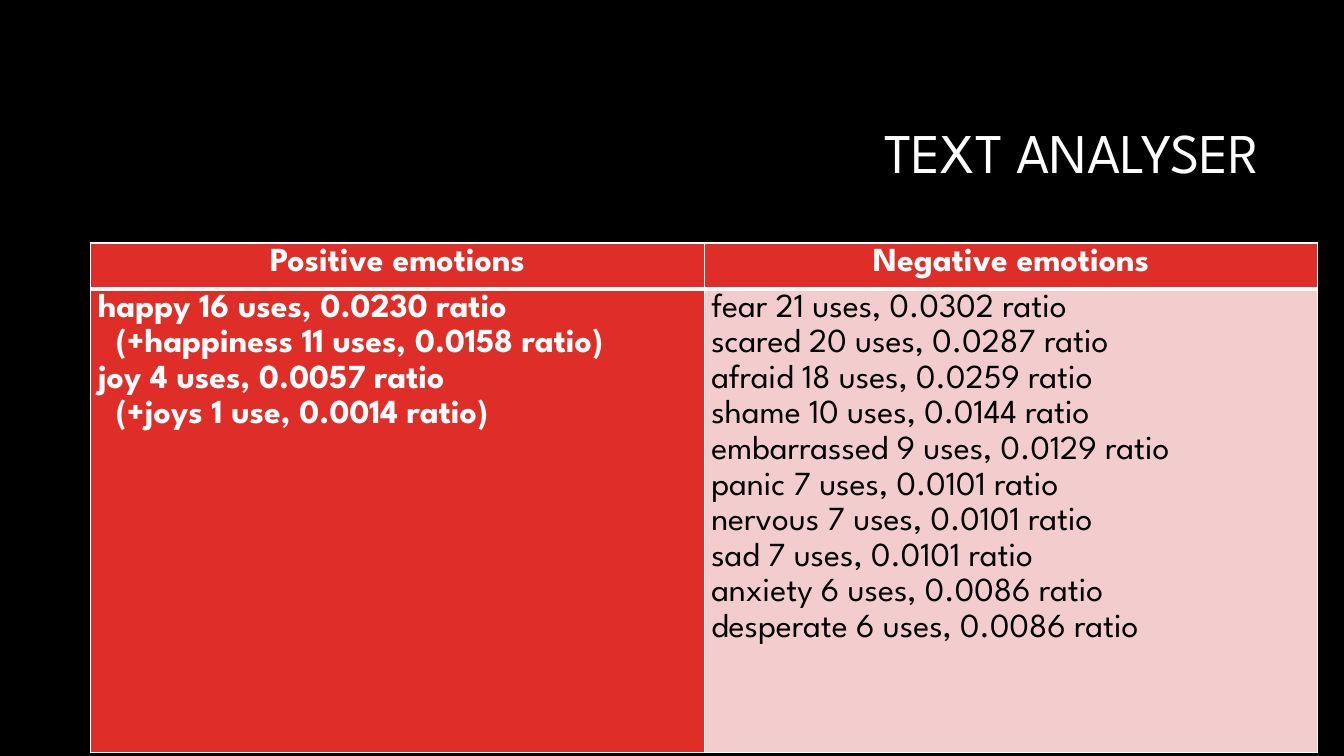
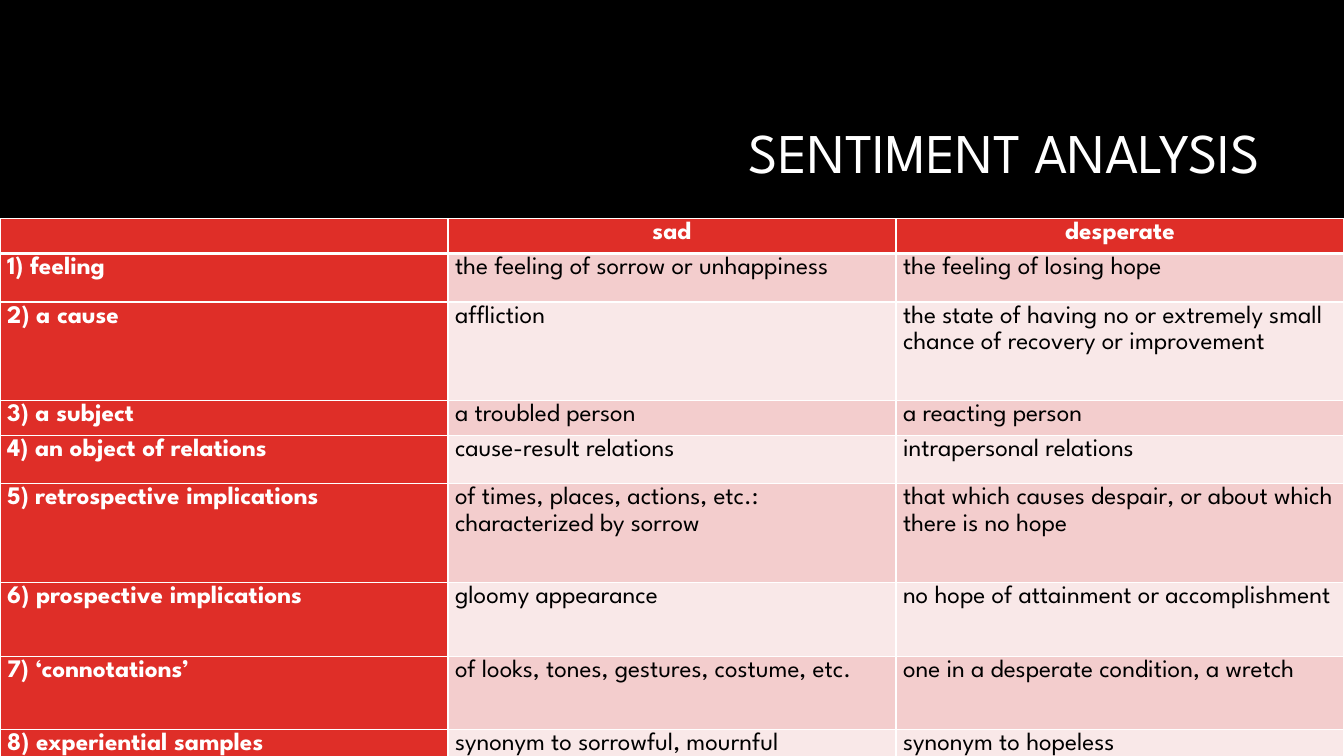
from lxml import etree
from pptx import Presentation
from pptx.dml.color import RGBColor
from pptx.enum.text import MSO_ANCHOR, PP_ALIGN
from pptx.oxml.ns import qn
from pptx.util import Inches, Pt

BLACK = RGBColor(0x00, 0x00, 0x00)
WHITE = RGBColor(0xFF, 0xFF, 0xFF)
RED = RGBColor(0xDF, 0x2E, 0x28)
BANDS = [RGBColor(0xF9, 0xE8, 0xE8), RGBColor(0xF3, 0xCD, 0xCD)]
FONT = "League Spartan"
SLIDE_WIDTH = 13.33
SUBITEM_INDENT = Inches(0.18)

# Each cell is a string; a line break starts a new paragraph.
POSITIVE = """happy 16 uses, 0.0230 ratio
(+happiness 11 uses, 0.0158 ratio)
joy 4 uses, 0.0057 ratio
(+joys 1 use, 0.0014 ratio)"""
NEGATIVE = """fear 21 uses, 0.0302 ratio
scared 20 uses, 0.0287 ratio
afraid 18 uses, 0.0259 ratio
shame 10 uses, 0.0144 ratio
embarrassed 9 uses, 0.0129 ratio
panic 7 uses, 0.0101 ratio
nervous 7 uses, 0.0101 ratio
sad 7 uses, 0.0101 ratio
anxiety 6 uses, 0.0086 ratio
desperate 6 uses, 0.0086 ratio"""

SLIDES = [
    {
        "title": "TEXT ANALYSER",
        "left": 0.9, "top": 2.41, "width": 12.17,
        "size": 24, "align": PP_ALIGN.JUSTIFY,
        "heights": [0.41, 4.38],
        "rows": [
            ["Positive emotions", "Negative emotions"],
            [POSITIVE, NEGATIVE],
        ],
    },
    {
        "title": "SENTIMENT ANALYSIS",
        "left": 0, "top": 2.17, "width": SLIDE_WIDTH,
        "size": 18, "align": PP_ALIGN.LEFT,
        "heights": [0.32, 0.48, 0.98, 0.23, 0.48, 0.98, 0.73, 0.73, 0.48],
        "rows": [
            ["", "sad", "desperate"],
            ["1) feeling", "the feeling of sorrow or unhappiness",
             "the feeling of losing hope"],
            ["2) a cause", "affliction",
             "the state of having no or extremely small chance of recovery or improvement"],
            ["3) a subject", "a troubled person", "a reacting person"],
            ["4) an object of relations", "cause-result relations",
             "intrapersonal relations"],
            ["5) retrospective implications",
             "of times, places, actions, etc.: characterized by sorrow",
             "that which causes despair, or about which there is no hope"],
            ["6) prospective implications", "gloomy appearance",
             "no hope of attainment or accomplishment"],
            ["7) ‘connotations’", "of looks, tones, gestures, costume, etc.",
             "one in a desperate condition, a wretch"],
            ["8) experiential samples", "synonym to sorrowful, mournful",
             "synonym to hopeless"],
        ],
    },
]


def style_text(paragraph, size, color, bold, align, spacing):
    paragraph.alignment = align
    paragraph.line_spacing = spacing
    for span in paragraph.runs:
        span.font.name = FONT
        span.font.size = Pt(size)
        span.font.bold = bold
        span.font.color.rgb = color


def add_borders(cell, row_index):
    """Draw white cell edges, with a heavier rule under the header row."""
    properties = cell._tc.get_or_add_tcPr()
    widths = {"L": 1, "R": 1, "T": 3 if row_index == 1 else 1,
              "B": 3 if row_index == 0 else 1}
    for side, width in widths.items():
        line = etree.SubElement(properties, qn(f"a:ln{side}"), w=str(Pt(width)))
        fill = etree.SubElement(line, qn("a:solidFill"))
        etree.SubElement(fill, qn("a:srgbClr"), val=str(WHITE))


deck = Presentation()
deck.slide_width = Inches(SLIDE_WIDTH)
deck.slide_height = Inches(7.5)

for content in SLIDES:
    page = deck.slides.add_slide(deck.slide_layouts[6])
    page.background.fill.solid()
    page.background.fill.fore_color.rgb = BLACK

    title = page.shapes.add_textbox(
        Inches(3.17), Inches(0.84), Inches(9.42), Inches(1.41))
    title.text_frame.word_wrap = True
    title.text_frame.vertical_anchor = MSO_ANCHOR.MIDDLE
    title.text_frame.text = content["title"]
    style_text(title.text_frame.paragraphs[0], 40, WHITE, False, PP_ALIGN.RIGHT, 0.9)

    rows, heights = content["rows"], content["heights"]
    table = page.shapes.add_table(
        len(rows), len(rows[0]), Inches(content["left"]), Inches(content["top"]),
        Inches(content["width"]), Inches(sum(heights))).table
    for row, height in zip(table.rows, heights):
        row.height = Inches(height)

    for row_index, texts in enumerate(rows):
        for column_index, text in enumerate(texts):
            cell = table.cell(row_index, column_index)
            is_header = row_index == 0
            is_label = is_header or column_index == 0
            cell.margin_left = cell.margin_right = Inches(0.07)
            cell.margin_top = cell.margin_bottom = 0
            add_borders(cell, row_index)
            cell.fill.solid()
            cell.fill.fore_color.rgb = RED if is_label else BANDS[row_index % 2]
            cell.text_frame.text = text
            for paragraph in cell.text_frame.paragraphs:
                style_text(paragraph, content["size"], WHITE if is_label else BLACK,
                           is_label, PP_ALIGN.CENTER if is_header else content["align"],
                           1.15)
                if paragraph.text.startswith("("):
                    paragraph._p.get_or_add_pPr().set("marL", str(SUBITEM_INDENT))

deck.save("out.pptx")
